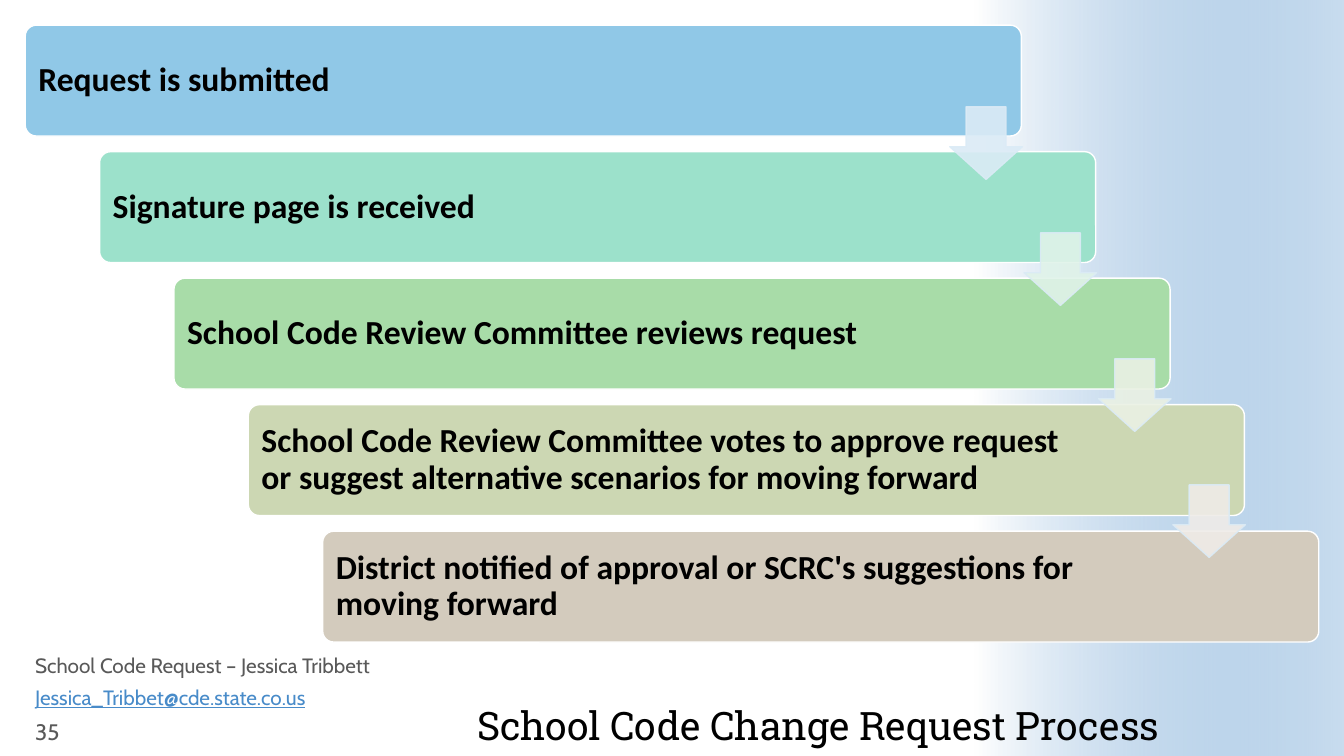
from lxml import etree
from pptx import Presentation
from pptx.dml.color import RGBColor
from pptx.enum.shapes import MSO_SHAPE
from pptx.enum.text import MSO_ANCHOR, PP_ALIGN
from pptx.oxml.ns import qn
from pptx.util import Inches, Pt

ROUNDED, DOWN_ARROW = MSO_SHAPE.ROUNDED_RECTANGLE, MSO_SHAPE.DOWN_ARROW
MIDDLE, BOTTOM = MSO_ANCHOR.MIDDLE, MSO_ANCHOR.BOTTOM
LEFT, RIGHT = PP_ALIGN.LEFT, PP_ALIGN.RIGHT

WHITE = RGBColor(0xFF, 0xFF, 0xFF)
BLACK = RGBColor(0x00, 0x00, 0x00)
GRAY = RGBColor(0x59, 0x59, 0x59)
BLUE = RGBColor(0x48, 0x8B, 0xC9)
ARROW_LINE = RGBColor(0xDB, 0xEB, 0xF6)

# Step text, box colour, colour of the arrow leading to the next step
STEPS = [
    ("Request is submitted",
     RGBColor(0x90, 0xC8, 0xE7), RGBColor(0xDB, 0xEB, 0xF6)),
    ("Signature page is received",
     RGBColor(0x9C, 0xE1, 0xCB), RGBColor(0xE0, 0xF3, 0xE9)),
    ("School Code Review Committee reviews request",
     RGBColor(0xA8, 0xDC, 0xA8), RGBColor(0xEA, 0xF1, 0xE4)),
    ("School Code Review Committee votes to approve request "
     "or suggest alternative scenarios for moving forward",
     RGBColor(0xCC, 0xD7, 0xB3), RGBColor(0xEF, 0xEC, 0xE8)),
    ("District notified of approval or SCRC's suggestions for moving forward",
     RGBColor(0xD3, 0xCB, 0xBD), None),
]
STEP_X = Inches(2.95 / 4)
STEP_Y = Inches(5.02 / 4)

# Footer text, top, size, line spacing, colour, underline
FOOTER = [
    ("School Code Request – Jessica Tribbett", 6.47, 14.8, 0.8, GRAY, False),
    ("Jessica_Tribbet@cde.state.co.us", 6.79, 14.8, 0.8, BLUE, True),
    ("35", 7.1, 16, 1.0, GRAY, False),
]


def set_opacity(element, percent):
    """Give every RGB colour inside the element this opacity."""
    for color in element.iter(qn("a:srgbClr")):
        etree.SubElement(color, qn("a:alpha"), val=str(percent * 1000))


def style_paragraph(paragraph, font_name, size, color):
    paragraph.font.name = font_name
    paragraph.font.size = Pt(size)
    paragraph.font.color.rgb = color


prs = Presentation()
prs.slide_width, prs.slide_height = Inches(13.33), Inches(7.5)
slide = prs.slides.add_slide(prs.slide_layouts[5])

# Title
title = slide.shapes.title
title.left, title.top = Inches(4.26), Inches(6.45)
title.width, title.height = Inches(7.24), Inches(0.98)
title_frame = title.text_frame
title_frame.text = "School Code Change Request Process"
title_frame.vertical_anchor = BOTTOM
title_frame.margin_left = title_frame.margin_right = 0
title_frame.margin_top = title_frame.margin_bottom = 0
heading = title_frame.paragraphs[0]
heading.alignment = RIGHT
heading.line_spacing = 0.9
style_paragraph(heading, "Roboto Slab", 28, BLACK)

# Fading panel at the right, behind the title
panel = slide.shapes.add_shape(
    MSO_SHAPE.RECTANGLE, Inches(9.67), 0, Inches(3.66), Inches(7.5))
panel.shadow.inherit = False
panel.line.fill.background()
panel.fill.gradient()
panel.fill.gradient_angle = 0
fade_start, fade_end = panel.fill.gradient_stops
fade_start.position, fade_end.position = 0, 1
fade_start.color.rgb = WHITE
fade_end.color.rgb = BLUE
panel_stops = list(panel.element.iter(qn("a:gs")))
set_opacity(panel_stops[-1], 30)
title.element.addprevious(panel.element)

# Staircase of steps
for i, (text, box_color, _) in enumerate(STEPS):
    box = slide.shapes.add_shape(
        ROUNDED, Inches(0.25) + i * STEP_X, Inches(0.25) + i * STEP_Y,
        Inches(9.88), Inches(1.1))
    box.adjustments[0] = 0.1
    box.shadow.inherit = False
    box.fill.solid()
    box.fill.fore_color.rgb = box_color
    box.line.color.rgb = WHITE
    box.line.width = Pt(1)
    frame = box.text_frame
    frame.word_wrap = True
    frame.vertical_anchor = MIDDLE
    frame.margin_left = frame.margin_top = frame.margin_bottom = Inches(0.1)
    frame.margin_right = Inches(1.56)
    frame.text = text
    label = frame.paragraphs[0]
    label.alignment = LEFT
    label.line_spacing = 0.9
    style_paragraph(label, "Calibri", 24, BLACK)
    label.font.bold = True

# Arrows between steps
for i, (_, _, arrow_color) in enumerate(STEPS[:-1]):
    arrow = slide.shapes.add_shape(
        DOWN_ARROW, Inches(9.42) + i * STEP_X, Inches(1.06) + i * Inches(1.25),
        Inches(0.72), Inches(0.72))
    arrow.adjustments[0], arrow.adjustments[1] = 0.55, 0.45
    arrow.shadow.inherit = False
    arrow.fill.solid()
    arrow.fill.fore_color.rgb = arrow_color
    arrow.line.color.rgb = ARROW_LINE
    arrow.line.width = Pt(1)
    set_opacity(arrow.element, 90)

# Contact lines and page number
for text, top, size, spacing, color, underline in FOOTER:
    footer = slide.shapes.add_textbox(
        Inches(0.25), Inches(top), Inches(3.89), Inches(0.31))
    footer.text_frame.word_wrap = True
    footer.text_frame.text = text
    if text.isdigit():
        footer.text_frame.vertical_anchor = MIDDLE
    line = footer.text_frame.paragraphs[0]
    line.line_spacing = spacing
    style_paragraph(line, "Cabin", size, color)
    line.font.underline = underline

prs.save("out.pptx")
